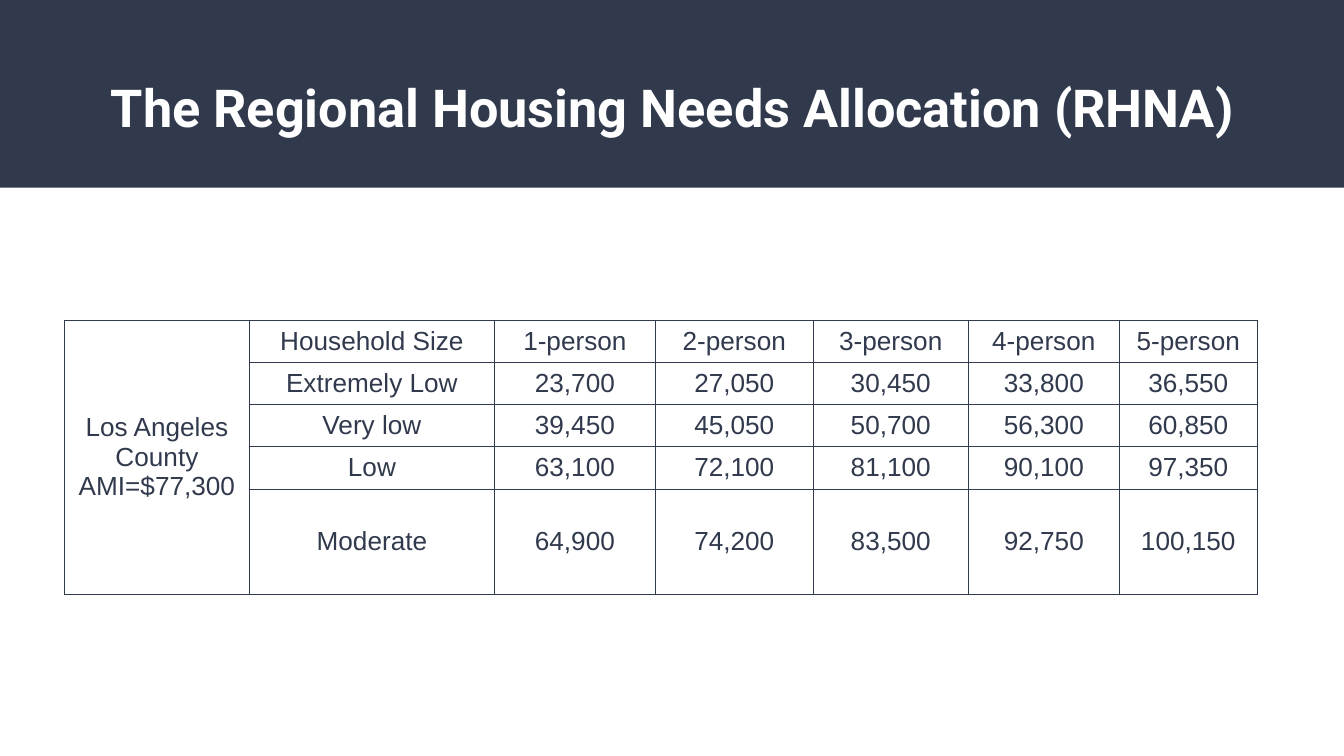
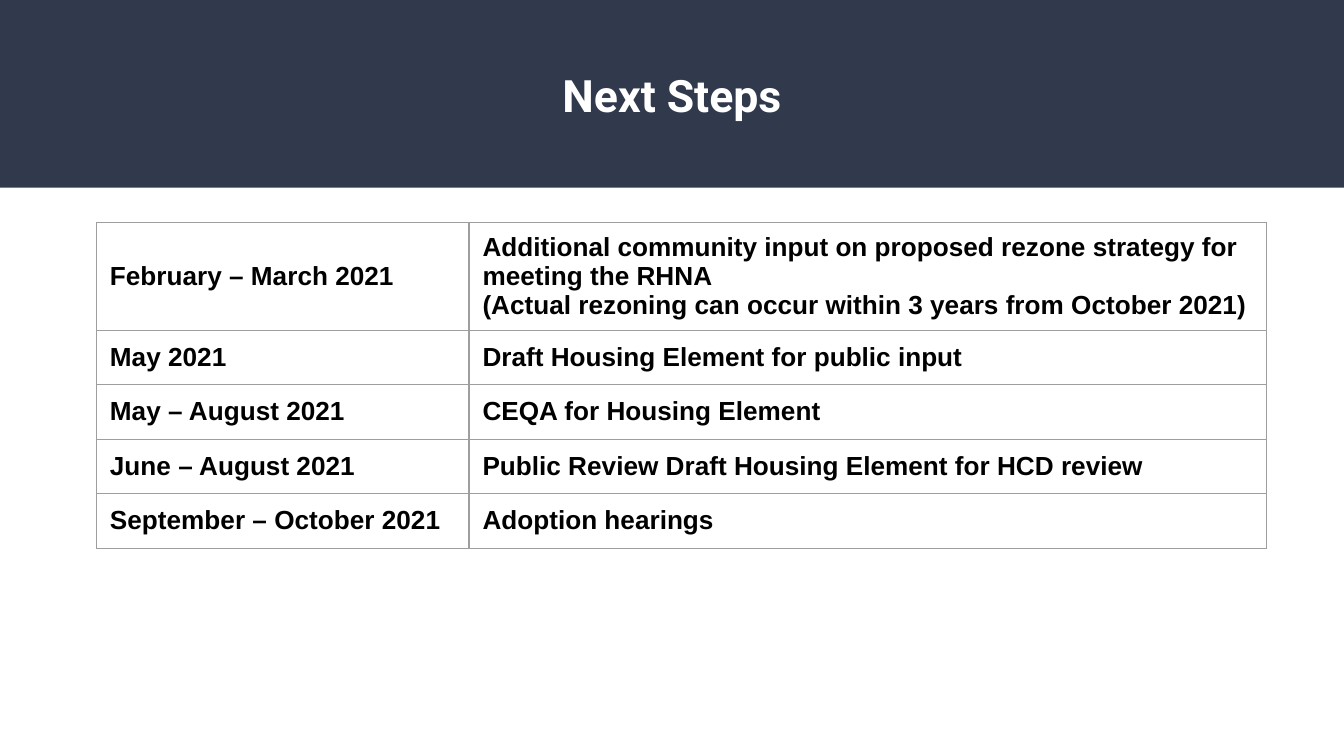
from lxml import etree
from pptx import Presentation
from pptx import util as u
from pptx.dml.color import RGBColor
from pptx.enum import shapes, text
from pptx.oxml import ns

NAVY, WHITE, BLACK, GREY = "31394D", "FFFFFF", "000000", "9E9E9E"
SLIDE_WIDTH, SLIDE_HEIGHT = 720, 405

INCOME_LIMITS = [
    ["Los Angeles County\nAMI=$77,300", "Household Size",
     "1-person", "2-person", "3-person", "4-person", "5-person"],
    ["", "Extremely Low", "23,700", "27,050", "30,450", "33,800", "36,550"],
    ["", "Very low", "39,450", "45,050", "50,700", "56,300", "60,850"],
    ["", "Low", "63,100", "72,100", "81,100", "90,100", "97,350"],
    ["", "Moderate", "64,900", "74,200", "83,500", "92,750", "100,150"],
]
NEXT_STEPS = [
    ["February – March 2021",
     "Additional community input on proposed rezone strategy for meeting the RHNA\n"
     "(Actual rezoning can occur within 3 years from October 2021)"],
    ["May 2021", "Draft Housing Element for public input"],
    ["May – August 2021", "CEQA for Housing Element"],
    ["June – August 2021", "Public Review Draft Housing Element for HCD review"],
    ["September – October 2021", "Adoption hearings"],
]


def color(value):
    """Turn a hex string into a colour."""
    return RGBColor.from_string(value)


def write(frame, content, font, size, ink, bold, align):
    """Write one paragraph per line of content in a single style."""
    frame.text = content
    for paragraph in frame.paragraphs:
        paragraph.alignment = align
        paragraph.font.name = font
        paragraph.font.size = u.Pt(size)
        paragraph.font.bold = bold
        paragraph.font.color.rgb = color(ink)


def add_titled_slide(presentation, title, top, size):
    """Add a slide with the navy band and its centred title."""
    slide = presentation.slides.add_slide(presentation.slide_layouts[6])
    slide.background.fill.solid()
    slide.background.fill.fore_color.rgb = color(WHITE)
    band = slide.shapes.add_shape(
        shapes.MSO_SHAPE.RECTANGLE, 0, 0, u.Pt(SLIDE_WIDTH), u.Pt(100.5))
    band.shadow.inherit = False
    band.fill.solid()
    band.fill.fore_color.rgb = color(NAVY)
    band.line.fill.background()
    box = slide.shapes.add_textbox(u.Pt(24.5), u.Pt(top), u.Pt(671), u.Pt(49))
    frame = box.text_frame
    frame.word_wrap = True
    frame.margin_left = frame.margin_right = frame.margin_bottom = u.Pt(7.2)
    frame.margin_top = u.Pt(8.8)
    write(frame, title, "Roboto", size, WHITE, True, text.PP_ALIGN.CENTER)
    return slide


def set_borders(cell, ink, width):
    """Draw the same line on all four sides of a cell."""
    properties = cell._tc.get_or_add_tcPr()
    for index, side in enumerate(("lnL", "lnR", "lnT", "lnB")):
        line = etree.Element(ns.qn(f"a:{side}"), w=str(u.Pt(width)))
        fill = etree.SubElement(line, ns.qn("a:solidFill"))
        etree.SubElement(fill, ns.qn("a:srgbClr"), val=ink)
        properties.insert(index, line)


def add_grid(slide, left, top, columns, heights, rows, margins, border, ink, bold, align):
    """Add a plain ruled table of 14-point text."""
    frame = slide.shapes.add_table(
        len(rows), len(columns), u.Pt(left), u.Pt(top),
        u.Pt(sum(columns)), u.Pt(sum(heights)))
    table = frame.table
    table.first_row = table.horz_banding = False
    for column, width in zip(table.columns, columns):
        column.width = u.Pt(width)
    for row, height, values in zip(table.rows, heights, rows):
        row.height = u.Pt(height)
        for cell, value in zip(row.cells, values):
            cell.margin_left = cell.margin_right = u.Pt(margins[0])
            cell.margin_top = cell.margin_bottom = u.Pt(margins[1])
            cell.vertical_anchor = text.MSO_ANCHOR.MIDDLE
            cell.fill.background()
            set_borders(cell, *border)
            write(cell.text_frame, value, "Arial", 14, ink, bold, align)
    return table


def main():
    """Build both slides and save them."""
    presentation = Presentation()
    presentation.slide_width = u.Pt(SLIDE_WIDTH)
    presentation.slide_height = u.Pt(SLIDE_HEIGHT)

    slide = add_titled_slide(
        presentation, "The Regional Housing Needs Allocation (RHNA)", 31.7, 28)
    limits = add_grid(
        slide, 34.5, 171.5, [99.2, 131.2, 86.3, 84.5, 83.2, 80.8, 74],
        [21.9] * 4 + [52.2], INCOME_LIMITS, (5, 2.9), (NAVY, 0.5),
        NAVY, False, text.PP_ALIGN.CENTER)
    limits.cell(0, 0).merge(limits.cell(4, 0))

    slide = add_titled_slide(presentation, "Next Steps", 27.4, 23.9)
    add_grid(
        slide, 51.7, 119.2, [199.6, 427.2], [54.6] + [29.2] * 4, NEXT_STEPS,
        (7.2, 3.6), (GREY, 0.75), BLACK, True, text.PP_ALIGN.LEFT)

    presentation.save("out.pptx")


if __name__ == "__main__":
    main()
